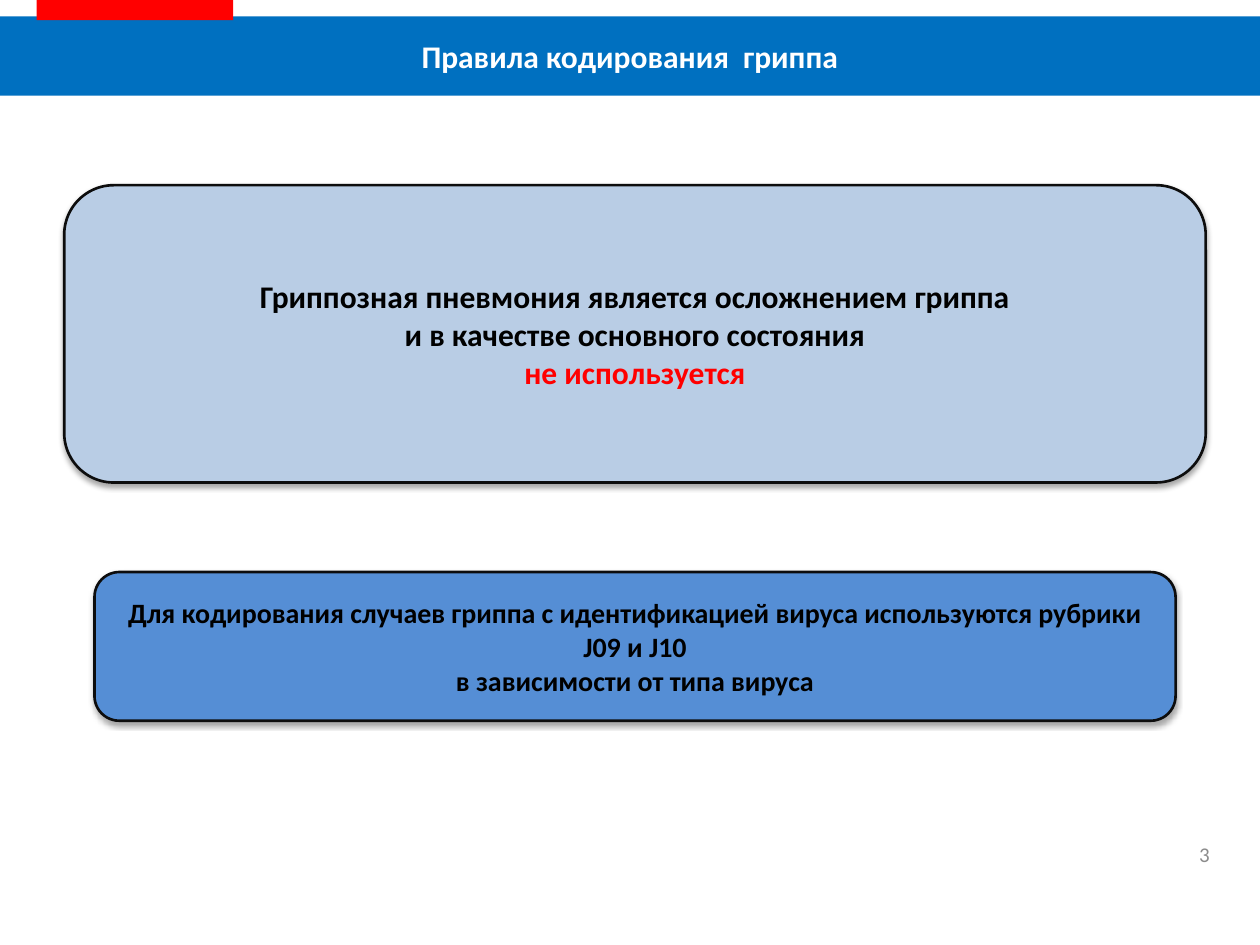
"""Build a slide with the coding rules for influenza."""
from lxml import etree
from pptx import Presentation
from pptx.dml.color import RGBColor
from pptx.enum.shapes import MSO_SHAPE
from pptx.enum.text import MSO_ANCHOR, PP_ALIGN
from pptx.oxml.ns import qn
from pptx.util import Inches, Pt

RECTANGLE, ROUNDED = MSO_SHAPE.RECTANGLE, MSO_SHAPE.ROUNDED_RECTANGLE
CENTER, RIGHT = PP_ALIGN.CENTER, PP_ALIGN.RIGHT
MIDDLE = MSO_ANCHOR.MIDDLE
WIDTH, HEIGHT = 10, 7.5

THEME = {
    "font": "Calibri",
    "banner": "0070C0", "accent": "FF0000", "pale": "B9CDE5", "strong": "558ED5",
    "outline": "0D0D0D", "dark": "000000", "light": "FFFFFF", "muted": "8C8C8C",
    "heading": 18, "body": 16, "number": 12, "line": 1.5,
}

TITLE = [("Правила кодирования  гриппа", "light")]
PAGE_NUMBER = [("3", "muted")]
CARDS = [
    {"top": 1.47, "width": 9.06, "height": 2.36, "fill": "pale", "size": "heading",
     "lines": [("Гриппозная пневмония является осложнением гриппа", "dark"),
               ("и в качестве основного состояния", "dark"),
               ("не используется", "accent")]},
    {"top": 4.54, "width": 8.58, "height": 1.18, "fill": "strong", "size": "body",
     "lines": [("Для кодирования случаев гриппа с идентификацией вируса "
                "используются рубрики J09 и J10", "dark"),
               ("в зависимости от типа вируса", "dark")]},
]
CARD_CENTER = 0.504 * WIDTH


def color(name):
    return RGBColor.from_string(THEME[name])


def add_block(slide, kind, box, fill):
    shape = slide.shapes.add_shape(kind, *map(Inches, box))
    shape.fill.solid()
    shape.fill.fore_color.rgb = color(fill)
    shape.line.fill.background()
    shape.shadow.inherit = False
    return shape


def write_lines(shape, lines, size, bold=True, alignment=CENTER):
    frame = shape.text_frame
    frame.word_wrap = True
    frame.vertical_anchor = MIDDLE
    for index, (text, name) in enumerate(lines):
        paragraph = frame.paragraphs[0] if index == 0 else frame.add_paragraph()
        paragraph.text = text
        paragraph.alignment = alignment
        paragraph.font.name = THEME["font"]
        paragraph.font.size = Pt(THEME[size])
        paragraph.font.bold = bold
        paragraph.font.color.rgb = color(name)


def add_soft_shadow(shape):
    effects = shape._element.spPr.find(qn("a:effectLst"))
    shadow = etree.SubElement(effects, qn("a:outerShdw"), blurRad=str(Pt(3.1)),
                              dist=str(Pt(1.8)), dir="5400000", rotWithShape="0")
    tint = etree.SubElement(shadow, qn("a:srgbClr"), val=THEME["dark"])
    etree.SubElement(tint, qn("a:alpha"), val="35000")


def add_card(slide, card):
    left = CARD_CENTER - card["width"] / 2
    box = (left, card["top"], card["width"], card["height"])
    shape = add_block(slide, ROUNDED, box, card["fill"])
    shape.line.color.rgb = color("outline")
    shape.line.width = Pt(THEME["line"])
    add_soft_shadow(shape)
    write_lines(shape, card["lines"], card["size"])


def main():
    presentation = Presentation()
    presentation.slide_width, presentation.slide_height = Inches(WIDTH), Inches(HEIGHT)
    slide = presentation.slides.add_slide(presentation.slide_layouts[6])

    banner = add_block(slide, RECTANGLE, (0, 0.13, WIDTH, 0.63), "banner")
    write_lines(banner, TITLE, "heading")
    add_block(slide, RECTANGLE, (0.29, 0, 1.56, 0.16), "accent")

    number = slide.shapes.add_textbox(*map(Inches, (7.37, 6.58, 2.33, 0.4)))
    write_lines(number, PAGE_NUMBER, "number", bold=False, alignment=RIGHT)

    for card in CARDS:
        add_card(slide, card)
    presentation.save("out.pptx")


if __name__ == "__main__":
    main()
